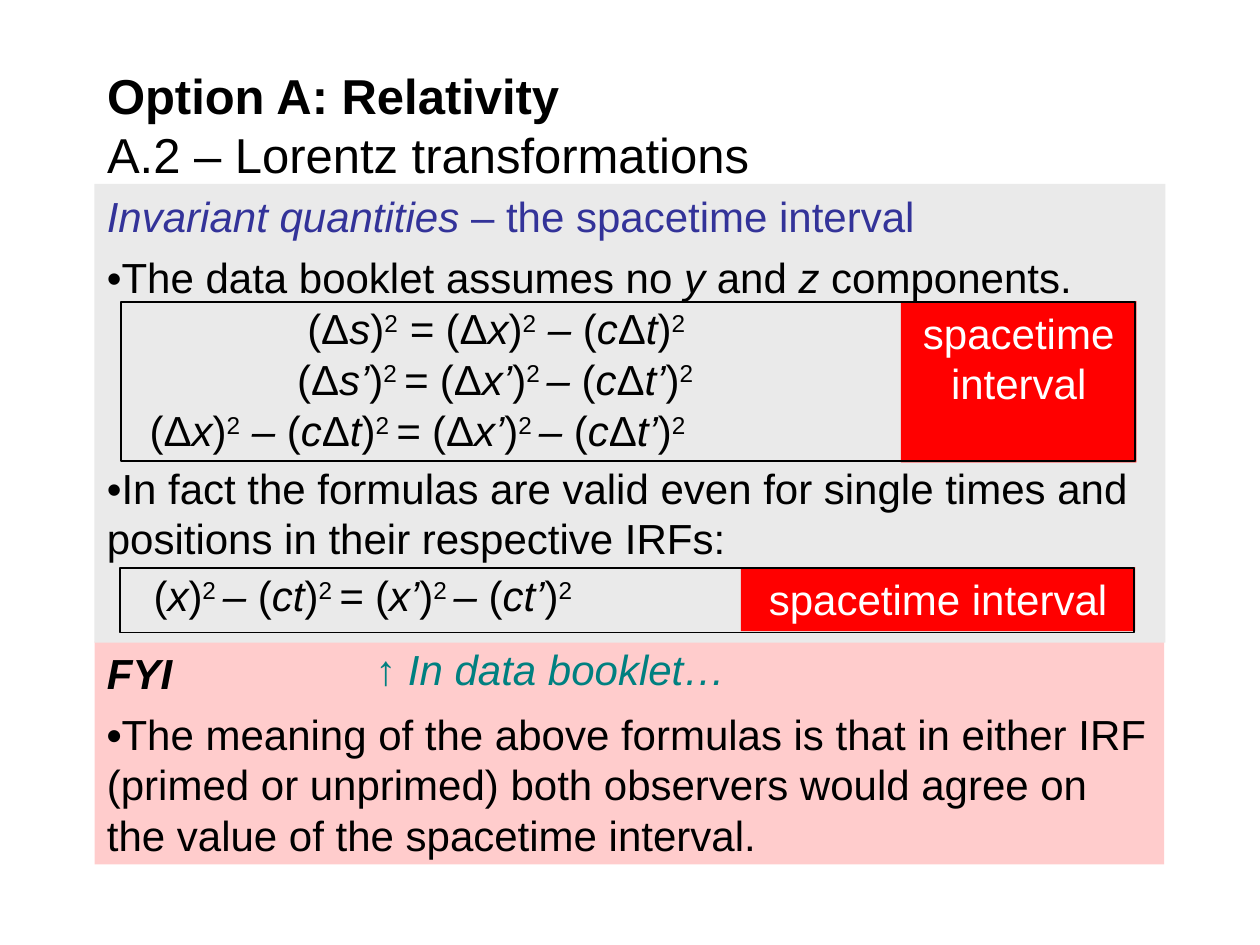
from pptx import Presentation
from pptx.dml.color import RGBColor
from pptx.enum import shapes, text
from pptx.util import Inches, Pt

FONT = "Arial"
BLACK, WHITE, RED = "000000", "FFFFFF", "FF0000"
GREY, PINK, NAVY, TEAL = "EAEAEA", "FFCCCC", "333399", "008080"
# Marks that switch a style on and off inside a text
MARKS = {"*": "bold", "_": "italic", "^": "superscript"}


def rgb(value):
    return RGBColor.from_string(value)


def add_run(paragraph, content, styles, size, color):
    run = paragraph.add_run()
    run.text = content
    run.font.name, run.font.size = FONT, Pt(size)
    run.font.bold = "bold" in styles
    run.font.italic = "italic" in styles
    run.font.color.rgb = rgb(color)
    if "superscript" in styles:
        run.font._element.set("baseline", "30000")


def write(paragraph, marked, color=BLACK, size=24, before=0,
          align=text.PP_ALIGN.LEFT):
    """Fill a paragraph from text with *bold*, _italic_ and ^superscript^."""
    paragraph.alignment = align
    paragraph.space_before = Pt(before)
    styles, pending = set(), ""
    for char in marked:
        if char in MARKS or char == "\n":
            if pending:
                add_run(paragraph, pending, styles, size, color)
            pending = ""
            if char == "\n":
                paragraph.add_line_break()
            else:
                styles ^= {MARKS[char]}
        else:
            pending += char
    if pending:
        add_run(paragraph, pending, styles, size, color)


def add_panel(parent, box, fill=None, line=None):
    """Add a rectangle and return its text frame."""
    panel = parent.add_shape(shapes.MSO_SHAPE.RECTANGLE, *map(Inches, box))
    panel.shadow.inherit = False
    if fill:
        panel.fill.solid()
        panel.fill.fore_color.rgb = rgb(fill)
    else:
        panel.fill.background()
    if line:
        panel.line.color.rgb = rgb(line)
        panel.line.width = Pt(1)
    else:
        panel.line.fill.background()
    frame = panel.text_frame
    frame.word_wrap = True
    frame.vertical_anchor = text.MSO_ANCHOR.TOP
    return frame


def add_paragraphs(frame, items):
    """Write (text, colour, space before) items one below the other."""
    for index, (marked, color, before) in enumerate(items):
        paragraph = frame.add_paragraph() if index else frame.paragraphs[0]
        write(paragraph, marked, color, before=before)


def add_text(parent, box, marked, color=BLACK, wrap=True):
    label = parent.add_textbox(*map(Inches, box))
    label.text_frame.word_wrap = wrap
    paragraph = label.text_frame.paragraphs[0]
    write(paragraph, marked, color)
    return paragraph


def add_formula(parent, box, marked, indent=0):
    formula = add_text(parent, box, marked)
    formula.line_spacing = 0.9
    if indent:
        formula._p.get_or_add_pPr().set("marL", str(Inches(indent)))


def add_formula_box(slide, label_box, frame_box, formulas):
    """Group a red label, a black frame and the formulas inside it."""
    group = slide.shapes.add_group_shape().shapes
    label = add_panel(group, label_box, fill=RED)
    write(label.paragraphs[0], "spacetime interval", WHITE,
          align=text.PP_ALIGN.CENTER)
    add_panel(group, frame_box, line=BLACK)
    for formula in formulas:
        add_formula(group, *formula)


def add_title(slide):
    title = slide.shapes.title
    title.left, title.top, title.width, title.height = map(
        Inches, (0.75, 0.5, 8.5, 0.98))
    frame = title.text_frame
    frame.auto_size = text.MSO_AUTO_SIZE.NONE
    frame.vertical_anchor = text.MSO_ANCHOR.MIDDLE
    write(frame.paragraphs[0],
          "*Option A: Relativity*\nA.2 – Lorentz transformations", size=28)


def main():
    prs = Presentation()
    prs.slide_width, prs.slide_height = Inches(10), Inches(7.5)
    slide = prs.slides.add_slide(prs.slide_layouts[5])
    add_title(slide)

    # Closing remark
    remark = add_panel(slide.shapes, (0.75, 5.09, 8.49, 1.77), fill=PINK)
    add_paragraphs(remark, [
        ("*_FYI_*", BLACK, 0),
        ("*•*The meaning of the above formulas is that in either IRF (primed "
         "or unprimed) both observers would agree on the value of the "
         "spacetime interval.", BLACK, 6),
    ])

    # Main explanation; the gap before the last point holds the formulas
    explanation = add_panel(slide.shapes, (0.75, 1.46, 8.5, 3.64), fill=GREY)
    add_paragraphs(explanation, [
        ("_Invariant quantities _– the spacetime interval", NAVY, 0),
        ("•The data booklet assumes no _y_ and _z_ components.", BLACK, 6),
        ("•In fact the formulas are valid even for single times and "
         "positions in their respective IRFs:", BLACK, 92),
    ])

    # Interval formulas, unprimed and primed
    interval = "(Δ_x_)^2^_ – _(_c_Δ_t_)^2^"
    primed = "(Δ_x’_)^2 ^_– _(_c_Δ_t’_)^2^"
    add_formula_box(
        slide, (7.15, 2.39, 1.87, 1.28), (0.96, 2.4, 8.05, 1.26), [
            ((1.14, 2.4, 5.71, 0.65), f"(Δ_s_)^2^_ = _{interval}", 1.2),
            ((1.06, 2.8, 5.97, 0.49), f"(Δ_s’_)^2 ^_= _{primed}", 1.2),
            ((1.09, 3.21, 5.97, 0.49), f"{interval}^ ^_= _{primed}"),
        ])

    # Formula for single times and positions
    add_formula_box(
        slide, (5.88, 4.5, 3.13, 0.51), (0.95, 4.51, 8.05, 0.51), [
            ((1.12, 4.52, 5.71, 0.46),
             "(_x_)^2 ^_– _(_ct_)^2 ^_= _(_x’_)^2 ^_– _(_ct’_)^2^"),
        ])

    # Pointer to the data booklet
    add_text(slide.shapes, (2.88, 5.06, 3.11, 0.5), "↑ _In data booklet…_",
             TEAL, wrap=False)

    prs.save("out.pptx")


if __name__ == "__main__":
    main()
